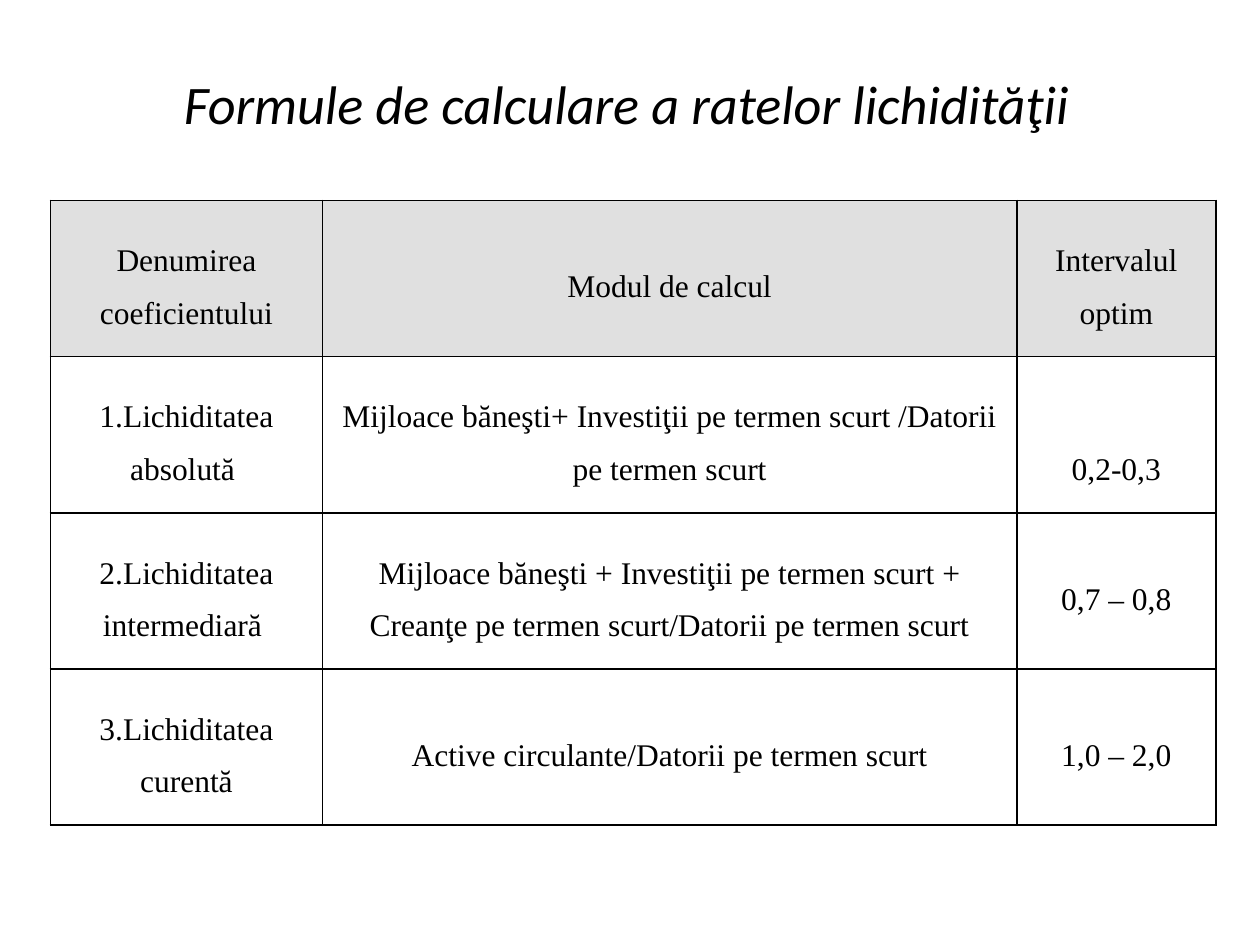
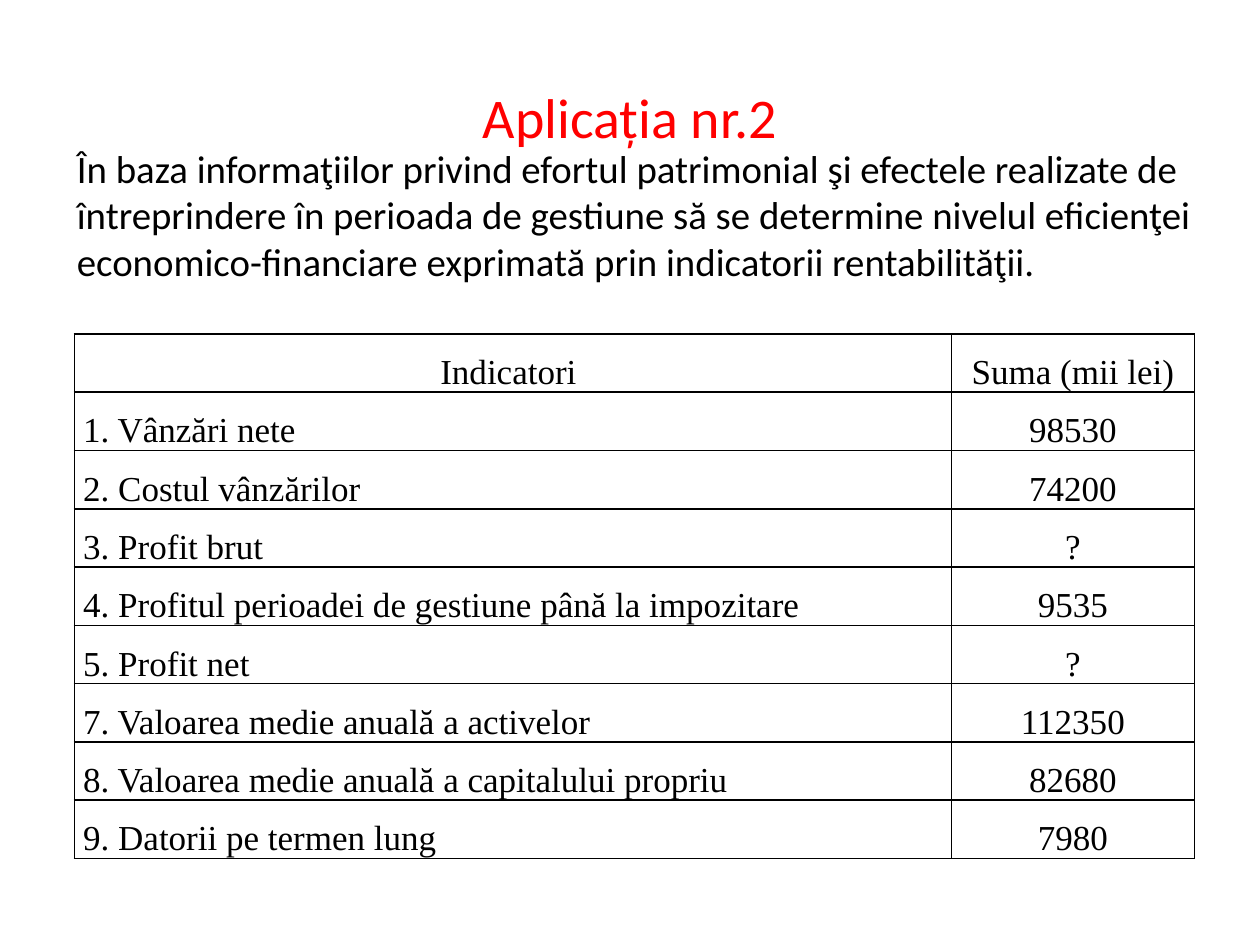
import pptx
import pptx.util
import pptx.dml.color
import pptx.enum.text
import pptx.oxml
import pptx.oxml.ns

Inches, Pt = pptx.util.Inches, pptx.util.Pt
ALIGN, ANCHOR = pptx.enum.text.PP_ALIGN, pptx.enum.text.MSO_ANCHOR

# Content
RATIOS_TITLE = "Formule de calculare a ratelor lichidităţii"
RATIOS = [
    ("Denumirea coeficientului", "Modul de calcul", "Intervalul optim"),
    ("1.Lichiditatea absolută ",
     "Mijloace băneşti+ Investiţii pe termen scurt /Datorii pe termen scurt",
     "0,2-0,3"),
    ("2.Lichiditatea intermediară ",
     "Mijloace băneşti + Investiţii pe termen scurt + "
     "Creanţe pe termen scurt/Datorii pe termen scurt",
     "0,7 – 0,8"),
    ("3.Lichiditatea curentă", "Active circulante/Datorii pe termen scurt", "1,0 – 2,0"),
]
EXERCISE_TITLE = "Aplicația nr.2"
EXERCISE_TASK = (
    "În baza informaţiilor privind efortul patrimonial şi efectele realizate de "
    "întreprindere în perioada de gestiune să se determine nivelul eficienţei "
    "economico-financiare exprimată prin indicatorii rentabilităţii."
)
INDICATORS = [
    ("Indicatori ", "Suma (mii lei)"),
    ("1. Vânzări nete", "98530"),
    ("2. Costul vânzărilor", "74200"),
    ("3. Profit brut", "?"),
    ("4. Profitul perioadei de gestiune până la impozitare", "9535"),
    ("5. Profit net", "?"),
    ("7. Valoarea medie anuală a activelor", "112350"),
    ("8. Valoarea medie anuală a capitalului propriu", "82680"),
    ("9. Datorii pe termen lung", "7980"),
]

# Shared look
COLORS = {"text": "000000", "accent": "FF0000", "header": "E0E0E0", "border": "000000"}
TEXT_FONT, TABLE_FONT = "Calibri", "Times New Roman"
TITLE_SIZE = (9, 1.25)
CELL_MARGIN = 0.07
LINE_SPACING = 1.5


def rgb(name):
    return pptx.dml.color.RGBColor.from_string(COLORS[name])


def add_text(paragraph, text, font, size, color="text", italic=False):
    run = paragraph.add_run()
    run.text = text
    run.font.name, run.font.size, run.font.italic = font, Pt(size), italic
    run.font.color.rgb = rgb(color)


def place(shape, left, top, width, height):
    shape.left, shape.top = Inches(left), Inches(top)
    shape.width, shape.height = Inches(width), Inches(height)
    shape.text_frame.vertical_anchor = ANCHOR.MIDDLE
    shape.text_frame.word_wrap = True
    shape.text_frame.auto_size = pptx.enum.text.MSO_AUTO_SIZE.NONE


def add_title(slide, text, left, top, size, **style):
    title = slide.shapes.title
    place(title, left, top, *TITLE_SIZE)
    paragraph = title.text_frame.paragraphs[0]
    paragraph.alignment = ALIGN.CENTER
    add_text(paragraph, text, TEXT_FONT, size, **style)


def add_task(slide, text, size):
    body = slide.placeholders[1]
    place(body, 0.51, 1.15, 9.21, 1.1)
    paragraph = body.text_frame.paragraphs[0]
    paragraph.space_before = Pt(0)
    add_text(paragraph, text, TEXT_FONT, size)
    # No bullet and no hanging indent
    properties = paragraph._p.get_or_add_pPr()
    properties.set("marL", "0")
    properties.set("indent", "0")
    properties.append(pptx.oxml.parse_xml(f'<a:buNone {pptx.oxml.ns.nsdecls("a")}/>'))


def draw_borders(cell):
    properties = cell._tc.get_or_add_tcPr()
    for index, side in enumerate(("lnL", "lnR", "lnT", "lnB")):
        properties.insert(index, pptx.oxml.parse_xml(
            f'<a:{side} {pptx.oxml.ns.nsdecls("a")} w="{Pt(1)}"><a:solidFill>'
            f'<a:srgbClr val="{COLORS["border"]}"/></a:solidFill></a:{side}>'))


def add_grid(slide, rows, left, top, widths, height, size, anchor,
             first_column=ALIGN.CENTER, header_fill=None):
    frame = slide.shapes.add_table(len(rows), len(widths), Inches(left), Inches(top),
                                   Inches(sum(widths)), Inches(height))
    table = frame.table
    table.first_row = table.horz_banding = False
    for column, width in zip(table.columns, widths):
        column.width = Inches(width)
    for row_index, row in enumerate(rows):
        table.rows[row_index].height = Inches(height / len(rows))
        for column_index, text in enumerate(row):
            cell = table.cell(row_index, column_index)
            cell.margin_left = cell.margin_right = Inches(CELL_MARGIN)
            cell.margin_top = cell.margin_bottom = 0
            cell.vertical_anchor = anchor
            if header_fill and row_index == 0:
                cell.fill.solid()
                cell.fill.fore_color.rgb = rgb(header_fill)
            else:
                cell.fill.background()
            draw_borders(cell)
            paragraph = cell.text_frame.paragraphs[0]
            in_first_column = row_index > 0 and column_index == 0
            paragraph.alignment = first_column if in_first_column else ALIGN.CENTER
            paragraph.line_spacing = LINE_SPACING
            add_text(paragraph, text, TABLE_FONT, size)
    return table


def build_ratios(presentation):
    slide = presentation.slides.add_slide(presentation.slide_layouts[5])
    add_title(slide, RATIOS_TITLE, 0.47, 0.19, 31, italic=True)
    table = add_grid(slide, RATIOS, 0.4, 1.59, (2.16, 5.51, 1.58), 4.96, 18,
                     ANCHOR.MIDDLE, header_fill="header")
    # The first interval sits one line lower
    table.cell(1, 2).margin_top = Inches(0.42)


def build_exercise(presentation):
    slide = presentation.slides.add_slide(presentation.slide_layouts[1])
    add_title(slide, EXERCISE_TITLE, 0.5, 0.3, 32, color="accent")
    add_task(slide, EXERCISE_TASK, 22.2)
    add_grid(slide, INDICATORS, 0.59, 2.65, (6.96, 1.93), 4.11, 20,
             ANCHOR.TOP, first_column=ALIGN.JUSTIFY)


def main():
    presentation = pptx.Presentation()
    presentation.slide_width, presentation.slide_height = Inches(10), Inches(7.5)
    build_ratios(presentation)
    build_exercise(presentation)
    presentation.save("out.pptx")


if __name__ == "__main__":
    main()
